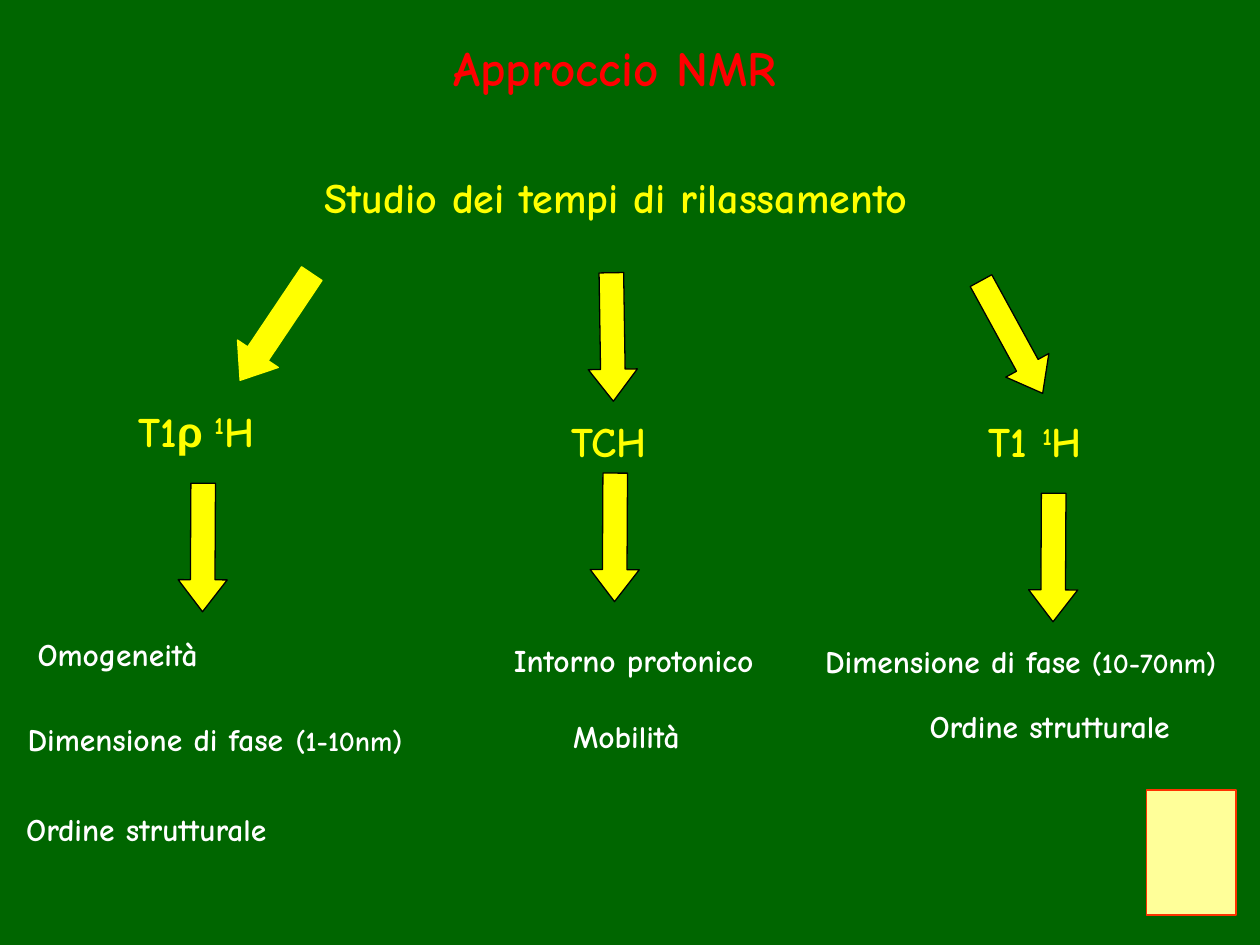
from pptx import Presentation, util as u
from pptx.dml.color import RGBColor
from pptx.enum import shapes, text

Inches = u.Inches
COLORS = {"green": "006600", "red": "FF0000", "yellow": "FFFF00", "black": "000000",
          "white": "FFFFFF", "cream": "FFFF99", "orange": "FF3300"}


def rgb(name):
    return RGBColor.from_string(COLORS[name])


def add_text(runs, left, top, width, height, size=18, color="white", wrap=False):
    """Add a bold text box; runs is a string or a list of (string, format) pairs."""
    tb = s.shapes.add_textbox(Inches(left), Inches(top), Inches(width), Inches(height))
    tf = tb.text_frame
    tf.word_wrap = wrap
    tf.auto_size = text.MSO_AUTO_SIZE.SHAPE_TO_FIT_TEXT
    p = tf.paragraphs[0]
    for string, fmt in [(runs, {})] if isinstance(runs, str) else runs:
        r = p.add_run()
        r.text = string
        r.font.name = fmt.get("font", "Comic Neue")
        r.font.size = u.Pt(fmt.get("size", size))
        r.font.bold = True
        r.font.color.rgb = rgb(color)
        if fmt.get("superscript"):
            r.font._element.set("baseline", "30000")


prs = Presentation()
prs.slide_width, prs.slide_height = Inches(10), Inches(7.5)
s = prs.slides.add_slide(prs.slide_layouts[6])
s.background.fill.solid()
s.background.fill.fore_color.rgb = rgb("green")

# Title and subject
add_text("Approccio NMR", 3.5, 0.25, 3.17, 0.57, size=28, color="red", wrap=True)
add_text("Studio dei tempi di rilassamento", 2.48, 1.31, 5.43, 0.5, size=24, color="yellow")

# Arrows: from the subject to each relaxation time, then on to its findings
for left, top, angle, line in [
    (1.68, 2.4, 123.9, "yellow"), (4.35, 2.48, 89.1, "black"), (7.52, 2.48, 61.3, "black"),
    (1.1, 4.15, 90.3, "black"), (4.37, 4.07, 90.3, "black"), (7.85, 4.23, 90.3, "black"),
]:
    sp = s.shapes.add_shape(shapes.MSO_SHAPE.RIGHT_ARROW,
                            Inches(left), Inches(top), Inches(1.02), Inches(0.39))
    sp.adjustments[0], sp.adjustments[1] = 0.5, 0.65
    sp.rotation = angle
    sp.shadow.inherit = False
    sp.fill.solid()
    sp.fill.fore_color.rgb = rgb("yellow")
    sp.line.color.rgb = rgb(line)
    sp.line.width = u.Pt(0.75)

# Relaxation times
proton = [("1", {"superscript": True}), ("H", {})]
for runs, left, top, width in [
    ([("T1", {}), ("ρ ", {"font": "Arial"})] + proton, 1, 3.17, 1.3),
    ("TCH", 4.44, 3.25, 0.9),
    ([("T1 ", {})] + proton, 7.75, 3.25, 1.11),
]:
    add_text(runs, left, top, width, 0.5, size=24, color="yellow")

# Findings, column by column
small = {"size": 16}
for runs, left, top, width, height in [
    ("Omogeneità", 0.2, 4.99, 1.6, 0.4),
    ([("Dimensione di fase", {}), (" ", {"size": 20}), ("(1-10nm)", small)],
     0.12, 5.64, 3.58, 0.43),
    ("Ordine strutturale", 0.11, 6.38, 2.44, 0.4),
    ("Intorno protonico", 3.98, 5.04, 2.3, 0.4),
    ("Mobilità", 4.45, 5.64, 1.16, 0.4),
    ([("Dimensione di fase ", {}), ("(10-70nm)", small)], 6.45, 5.05, 3.67, 0.67),
    ("Ordine strutturale", 7.28, 5.56, 2.44, 0.4),
]:
    add_text(runs, left, top, width, height)

# Corner panel
sp = s.shapes.add_shape(shapes.MSO_SHAPE.RECTANGLE,
                        Inches(9.1), Inches(6.27), Inches(0.71), Inches(0.99))
sp.shadow.inherit = False
sp.fill.solid()
sp.fill.fore_color.rgb = rgb("cream")
sp.line.color.rgb = rgb("orange")
sp.line.width = u.Pt(1)

prs.save("out.pptx")
